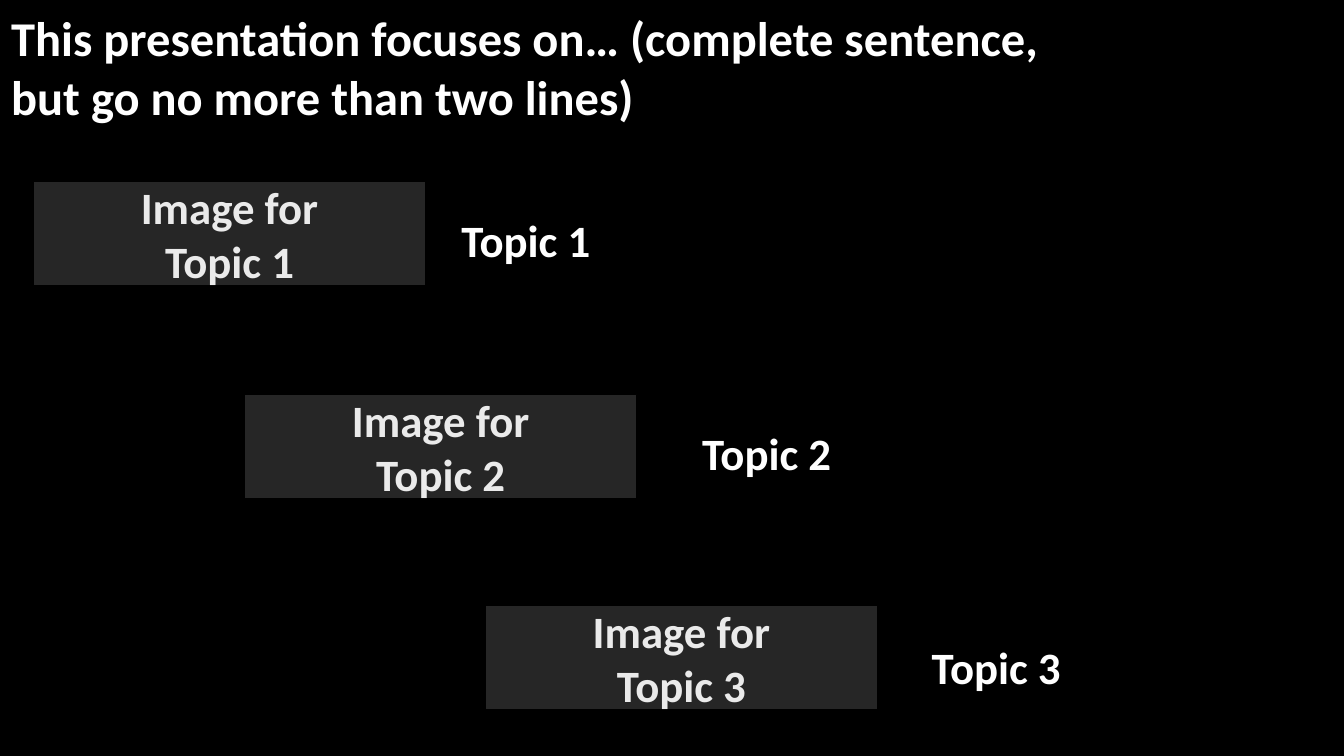
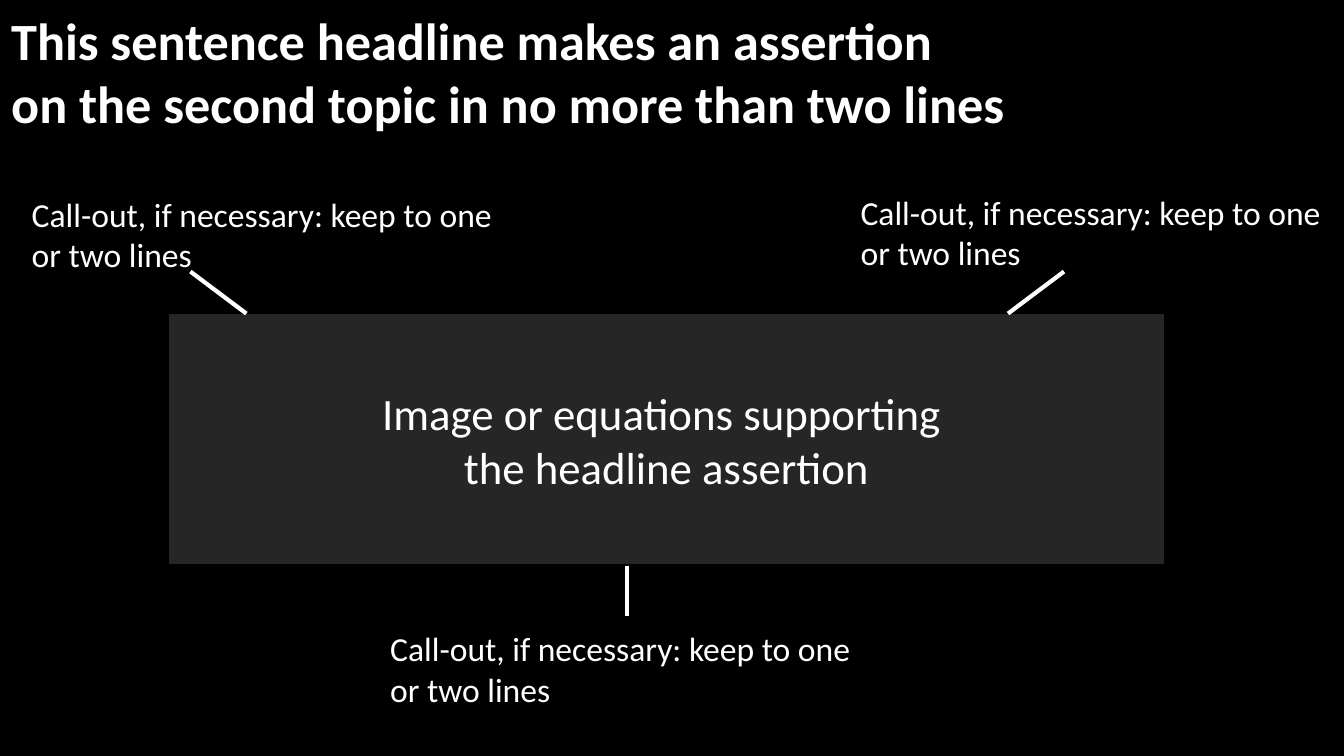
from lxml import etree
from pptx import Presentation, util as u
from pptx.dml.color import RGBColor
from pptx.enum import shapes, text
from pptx.oxml.ns import qn

BLACK = RGBColor(0x00, 0x00, 0x00)
PANEL = RGBColor(0x26, 0x26, 0x26)
PALE = RGBColor(0xEA, 0xEA, 0xEA)
WHITE = RGBColor(0xFF, 0xFF, 0xFF)
FONT = "Calibri"
COLUMNS, ROWS = 120, 67.5
CELL = u.Inches(10) / COLUMNS
CALLOUT = "Call-out, if necessary: keep to one or two lines"


def cells(*counts):
    """Turn counts of grid cells into lengths."""
    return [u.Emu(round(count * CELL)) for count in counts]


def write(shape, content, size, color=WHITE, bold=False, align=None, margins=(0, 0)):
    """Fill a shape with text in one style."""
    frame = shape.text_frame
    frame.word_wrap = True
    frame.margin_left = frame.margin_right = u.Inches(margins[0])
    frame.margin_top = frame.margin_bottom = u.Inches(margins[1])
    frame.text = content
    for paragraph in frame.paragraphs:
        paragraph.alignment = align
        for run in paragraph.runs:
            run.font.name, run.font.size = FONT, u.Pt(size)
            run.font.bold, run.font.color.rgb = bold, color


def add_label(slide, box, content, size, bold=False, margins=(0.07, 0.03)):
    """Add a text box on the grid."""
    label = slide.shapes.add_textbox(*cells(*box))
    write(label, content, size, bold=bold, margins=margins)


def add_panel(slide, box, content, color=WHITE, bold=False):
    """Add a dark rectangle that holds the place of an image."""
    panel = slide.shapes.add_shape(shapes.MSO_SHAPE.RECTANGLE, *cells(*box))
    panel.shadow.inherit = False
    panel.fill.solid()
    panel.fill.fore_color.rgb = PANEL
    panel.line.color.rgb = BLACK
    panel.line.width = u.Pt(0.75)
    write(panel, content, 24, color, bold, text.PP_ALIGN.CENTER, (0.1, 0.05))
    panel.text_frame.vertical_anchor = text.MSO_ANCHOR.MIDDLE


def add_pointer(slide, start, end):
    """Add a white line between two grid points."""
    pointer = slide.shapes.add_connector(
        shapes.MSO_CONNECTOR.STRAIGHT, *cells(*start, *end))
    pointer.line.color.rgb = WHITE
    pointer.line.width = u.Pt(2.25)
    etree.SubElement(pointer._element.spPr, qn("a:effectLst"))


def add_slide(presentation, headline, size, height):
    """Add a black slide with its headline."""
    slide = presentation.slides.add_slide(presentation.slide_layouts[6])
    slide.background.fill.solid()
    slide.background.fill.fore_color.rgb = BLACK
    add_label(slide, (1, 0.75, 118, height), headline, size, True, (0, 0))
    return slide


def add_topics(presentation):
    """Add the overview with three topics in descending steps."""
    slide = add_slide(
        presentation,
        "This presentation focuses on… (complete sentence, \vbut go no more than two lines)",
        26, 10.5)
    steps = ((3, 16.15, 40.35), (21.85, 35.2, 61.85), (43.35, 54.05, 82.35))
    for index, (panel_left, panel_top, label_left) in enumerate(steps):
        topic = f"Topic {index + 1}"
        add_label(slide, (label_left, 18.6 + 19.08 * index, 15.6, 5.5), topic, 24, True)
        add_panel(slide, (panel_left, panel_top, 35, 9.36),
                  f"Image for\n{topic}", PALE, True)


def add_assertion(presentation):
    """Add the slide with a central panel and three call-outs."""
    slide = add_slide(
        presentation,
        "This sentence headline makes an assertion \von the second topic in no more than two lines",
        28, 11.25)
    add_panel(slide, (15, 28, 89, 22.45),
              "Image or equations supporting \vthe headline assertion")
    pointers = (((56, 50.5), (56, 55)), ((17, 24.25), (22, 28)), ((95, 24.25), (90, 28)))
    for start, end in pointers:
        add_pointer(slide, start, end)
    for left, top in ((2, 16.95), (76, 16.75), (34, 55.75)):
        add_label(slide, (left, top, 43, 6), CALLOUT, 18)


def main():
    """Build and save the presentation."""
    presentation = Presentation()
    presentation.slide_width, presentation.slide_height = cells(COLUMNS, ROWS)
    add_topics(presentation)
    add_assertion(presentation)
    presentation.save("out.pptx")


if __name__ == "__main__":
    main()
